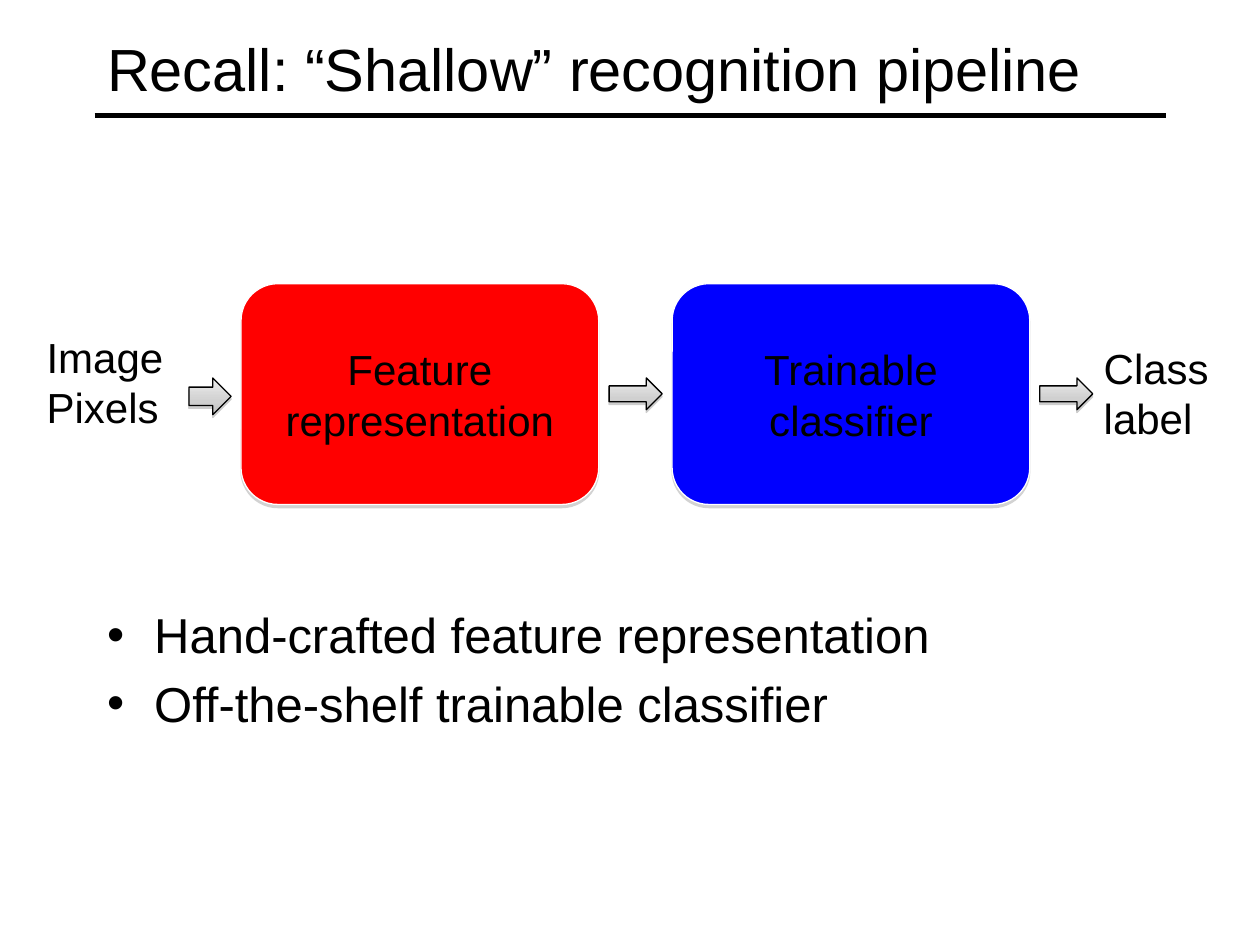
from lxml.etree import SubElement
from pptx import Presentation
from pptx.dml.color import RGBColor
from pptx.enum.shapes import MSO_CONNECTOR, MSO_SHAPE
from pptx.enum.text import MSO_ANCHOR, MSO_AUTO_SIZE, PP_ALIGN
from pptx.oxml.ns import qn
from pptx.util import Cm, Pt

FONT = "Arial"
BLACK = "000000"
ARROW_STOPS = [(0, "EDEDED"), (65, "D0D0D0"), (100, "BCBCBC")]
DOWNWARD = "5400000"


def color(value):
    return RGBColor.from_string(value)


def write(shape, paragraphs, size=24, align=PP_ALIGN.LEFT, anchor=MSO_ANCHOR.TOP):
    frame = shape.text_frame
    frame.word_wrap = True
    frame.vertical_anchor = anchor
    for index, text in enumerate(paragraphs):
        para = frame.paragraphs[0] if index == 0 else frame.add_paragraph()
        para.text = text
        para.alignment = align
        for span in para.runs:
            span.font.name = FONT
            span.font.size = Pt(size)
            span.font.color.rgb = color(BLACK)
    return frame


def add_text(page, left, top, width, height, paragraphs, grow=False, **text_format):
    box = page.shapes.add_textbox(Cm(left), Cm(top), Cm(width), Cm(height))
    frame = write(box, paragraphs, **text_format)
    frame.auto_size = MSO_AUTO_SIZE.SHAPE_TO_FIT_TEXT if grow else MSO_AUTO_SIZE.NONE
    return frame


def add_bullets(page, left, top, width, height, items):
    frame = add_text(page, left, top, width, height, items, size=28)
    for para in frame.paragraphs:
        properties = para._p.get_or_add_pPr()
        properties.set("marL", str(Cm(0.95)))
        properties.set("indent", str(Cm(-0.95)))
        before = SubElement(properties, qn("a:spcBef"))
        SubElement(before, qn("a:spcPct"), val="20000")
        SubElement(properties, qn("a:buFont"), typeface=FONT)
        SubElement(properties, qn("a:buChar"), char="•")


def add_shadow(shape, distance, opacity):
    shape.shadow.inherit = False
    effects = shape._element.spPr.find(qn("a:effectLst"))
    shadow = SubElement(effects, qn("a:outerShdw"), blurRad="0",
                        dist=str(Pt(distance)), dir=DOWNWARD, rotWithShape="0")
    tint = SubElement(shadow, qn("a:srgbClr"), val="808080")
    SubElement(tint, qn("a:alpha"), val=str(opacity * 1000))


def fill_gradient(shape, stops):
    shape.fill.gradient()
    gradient = shape._element.spPr.find(qn("a:gradFill"))
    for child in list(gradient):
        gradient.remove(child)
    stop_list = SubElement(gradient, qn("a:gsLst"))
    for position, value in stops:
        stop = SubElement(stop_list, qn("a:gs"), pos=str(position * 1000))
        SubElement(stop, qn("a:srgbClr"), val=value)
    SubElement(gradient, qn("a:lin"), ang=DOWNWARD, scaled="0")


def add_shape(page, kind, left, top, width, height, line):
    shape = page.shapes.add_shape(kind, Cm(left), Cm(top), Cm(width), Cm(height))
    shape.line.color.rgb = color(line)
    shape.line.width = Pt(0.75)
    return shape


def add_stage(page, left, fill, text):
    stage = add_shape(page, MSO_SHAPE.ROUNDED_RECTANGLE, left, 5.72, 7.21, 4.45, "FFFFFF")
    stage.fill.solid()
    stage.fill.fore_color.rgb = color(fill)
    add_shadow(stage, 1.8, 35)
    write(stage, [text], align=PP_ALIGN.CENTER, anchor=MSO_ANCHOR.MIDDLE)


def add_arrow(page, left, width=1.07, height=0.64):
    arrow = add_shape(page, MSO_SHAPE.RIGHT_ARROW, left, 7.62, width, height, BLACK)
    fill_gradient(arrow, ARROW_STOPS)
    add_shadow(arrow, 1.6, 38)


def add_rule(page, left, right, top):
    rule = page.shapes.add_connector(
        MSO_CONNECTOR.STRAIGHT, Cm(left), Cm(top), Cm(right), Cm(top))
    rule.line.color.rgb = color(BLACK)
    rule.line.width = Pt(3)
    SubElement(rule._element.spPr, qn("a:effectLst"))


def main():
    deck = Presentation()
    deck.slide_width, deck.slide_height = Cm(25.4), Cm(19.05)
    page = deck.slides.add_slide(deck.slide_layouts[6])

    add_rule(page, 1.91, 23.5, 2.33)
    add_text(page, 1.91, 0.21, 21.59, 2.33, ["Recall: “Shallow” recognition pipeline"],
             size=34, anchor=MSO_ANCHOR.MIDDLE)

    add_stage(page, 4.86, "FF0000", "Feature representation")
    add_stage(page, 13.55, "0000FF", "Trainable\nclassifier")
    add_arrow(page, 3.81, width=0.85, height=0.74)
    add_arrow(page, 12.28)
    add_arrow(page, 20.96)

    add_text(page, 0.69, 6.56, 5.03, 2.31, ["Image", "Pixels"], grow=True)
    add_text(page, 22, 6.77, 3.4, 2.31, ["Class label"], grow=True)
    add_bullets(page, 1.91, 12.07, 23.06, 4.65,
                ["Hand-crafted feature representation", "Off-the-shelf trainable classifier"])

    deck.save("out.pptx")


if __name__ == "__main__":
    main()
